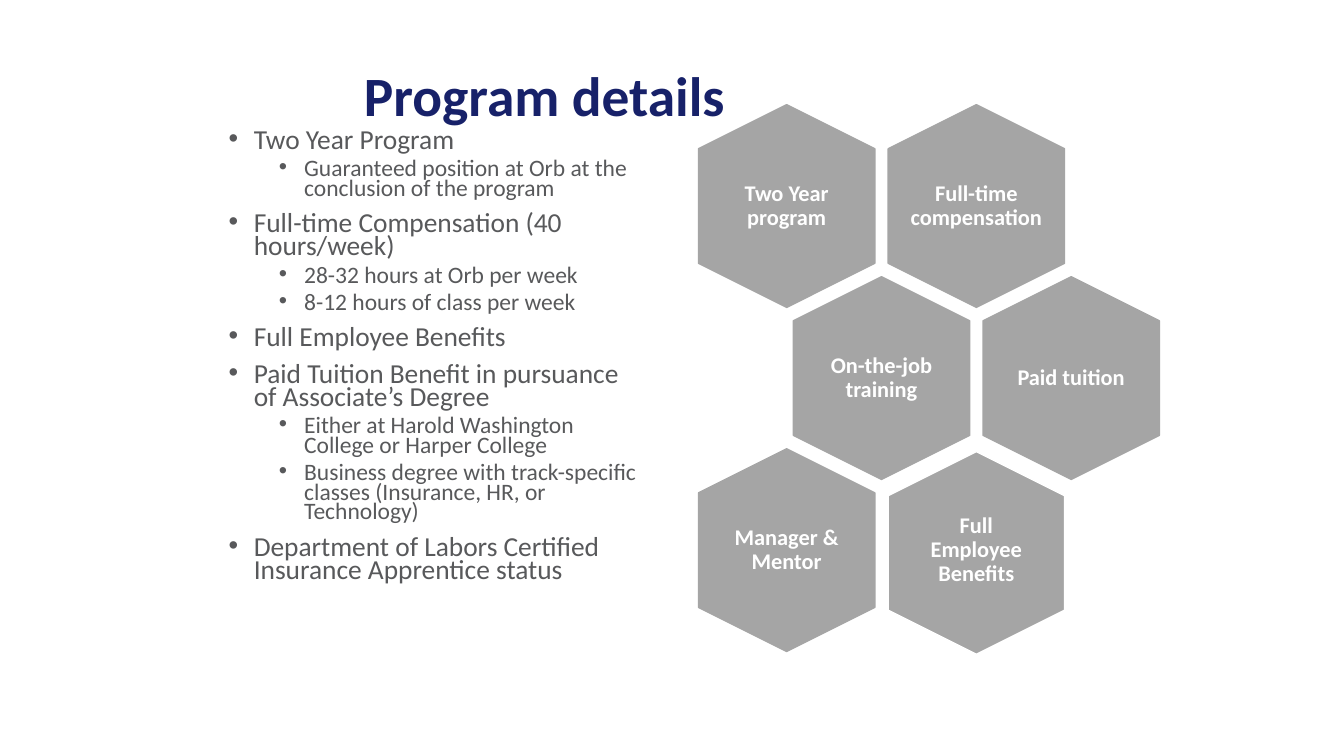
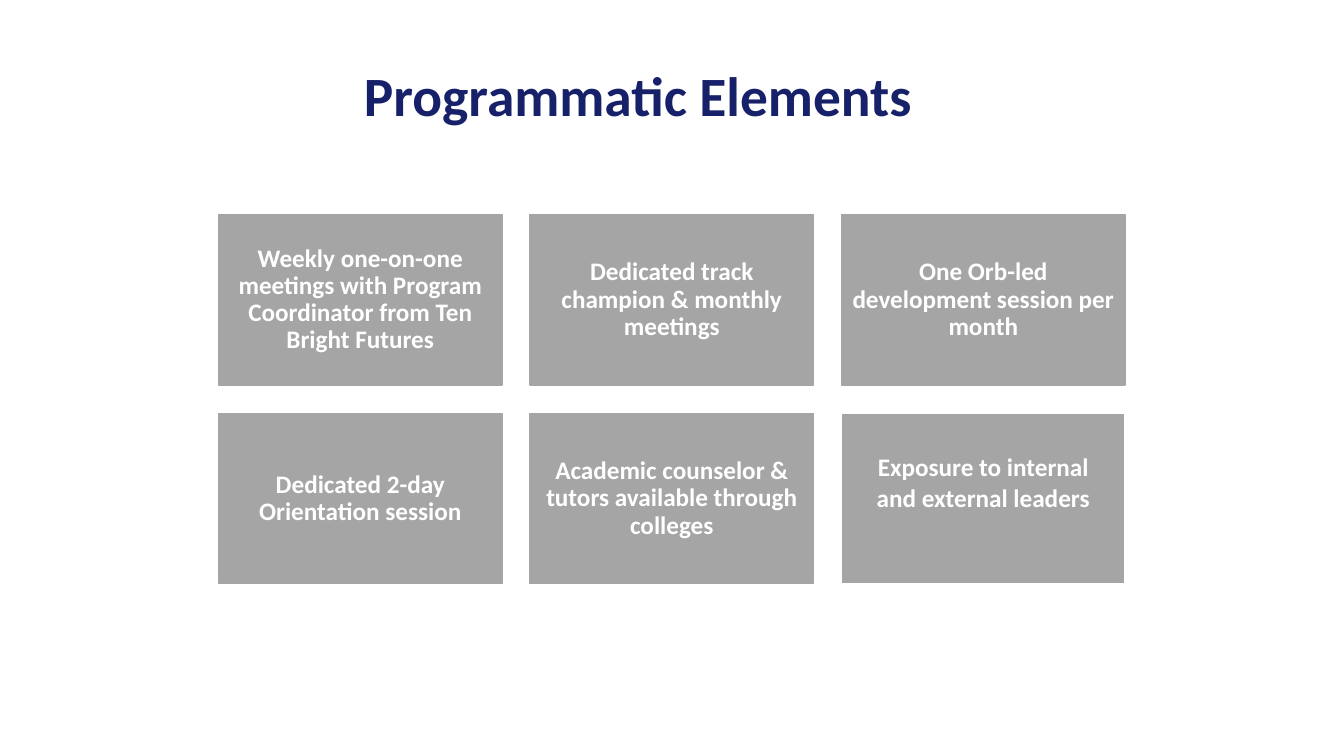
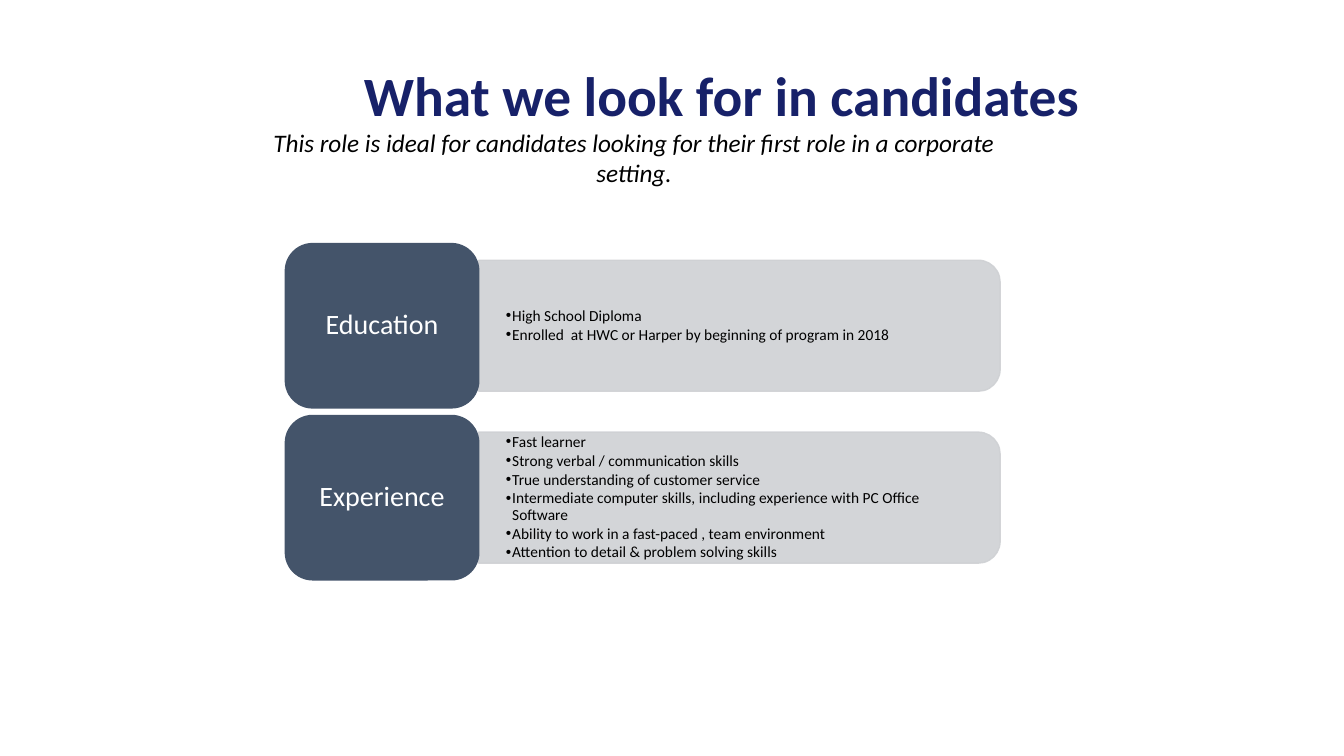
import pptx
import pptx.dml.color
import pptx.enum.shapes
import pptx.enum.text
import pptx.oxml
import pptx.oxml.ns
import pptx.util

Pt = pptx.util.Pt
RGBColor = pptx.dml.color.RGBColor
SHAPE = pptx.enum.shapes.MSO_SHAPE
ALIGN = pptx.enum.text.PP_ALIGN
ANCHOR = pptx.enum.text.MSO_ANCHOR
AUTO_SIZE = pptx.enum.text.MSO_AUTO_SIZE
qn = pptx.oxml.ns.qn

NAVY = RGBColor(0x17, 0x21, 0x69)
TEXT_GRAY = RGBColor(0x58, 0x59, 0x5B)
TILE_GRAY = RGBColor(0xA5, 0xA5, 0xA5)
BAR_GRAY = RGBColor(0xCF, 0xD1, 0xD4)
SLATE = RGBColor(0x44, 0x54, 0x6A)
WHITE = RGBColor(0xFF, 0xFF, 0xFF)
BLACK = RGBColor(0, 0, 0)

FONT = "Calibri"
TITLE_BOX = (252.7, 48.2, 600, 44)

TITLE = dict(size=39.6, color=NAVY, bold=True)
HEXAGON_LABEL = dict(size=16, color=WHITE, bold=True)
TILE_LABEL = dict(size=18, color=WHITE, bold=True)
CARD_LABEL = dict(size=20, color=WHITE)
BAR_ITEM = dict(size=11, color=BLACK)
SUBTITLE = dict(size=18, color=BLACK, italic=True)
DETAIL = dict(size=19.6, color=TEXT_GRAY)
SUB_DETAIL = dict(size=16.8, color=TEXT_GRAY)

DETAILS = [
    (0, "Two Year Program"),
    (1, "Guaranteed position at Orb at the conclusion of the program"),
    (0, "Full-time Compensation (40 hours/week)"),
    (1, "28-32 hours at Orb per week"),
    (1, "8-12 hours of class per week"),
    (0, "Full Employee Benefits"),
    (0, "Paid Tuition Benefit in pursuance of Associate’s Degree"),
    (1, "Either at Harold Washington College or Harper College"),
    (1, "Business degree with track-specific classes (Insurance, HR, or Technology)"),
    (0, "Department of Labors Certified Insurance Apprentice status"),
]

# Column, row, label, label width
HEXAGONS = [
    (0, 0, "Two Year program", 86),
    (1, 0, "Full-time compensation", 112),
    (0.5, 1, "On-the-job training", 86),
    (1.5, 1, "Paid tuition", 86),
    (0, 2, "Manager & Mentor", 86),
]

TILES = [
    "Weekly one-on-one meetings with Program Coordinator from Ten Bright Futures",
    "Dedicated track champion & monthly meetings",
    "One Orb-led development session per month",
    "Dedicated 2-day Orientation session",
    "Academic counselor & tutors available through colleges",
]

CRITERIA = [
    ("Education", [
        "High School Diploma",
        "Enrolled  at HWC or Harper by beginning of program in 2018",
    ]),
    ("Experience", [
        "Fast learner",
        "Strong verbal / communication skills",
        "True understanding of customer service",
        "Intermediate computer skills, including experience with PC Office Software",
        "Ability to work in a fast-paced , team environment",
        "Attention to detail & problem solving skills",
    ]),
]


def place(sp, box):
    for name, value in zip(("left", "top", "width", "height"), box):
        setattr(sp, name, Pt(value))


def setup_frame(sp, anchor=ANCHOR.MIDDLE, insets=(7.2, 3.6, 7.2, 3.6)):
    tf = sp.text_frame
    values = dict(word_wrap=True, auto_size=AUTO_SIZE.NONE, vertical_anchor=anchor)
    for side, inset in zip(("left", "top", "right", "bottom"), insets):
        values["margin_" + side] = Pt(inset)
    for name, value in values.items():
        setattr(tf, name, value)
    return tf


def write(p, text, style, align=ALIGN.CENTER, spacing=0.9):
    p.alignment = align
    p.line_spacing = spacing
    r = p.add_run()
    r.text = text
    r.font.name = FONT
    for name, value in style.items():
        if name == "color":
            r.font.color.rgb = value
        else:
            setattr(r.font, name, Pt(value) if name == "size" else value)


def add_bullet(p, left, hang):
    pPr = p._p.get_or_add_pPr()
    pPr.set("marL", str(Pt(left)))
    pPr.set("indent", str(-Pt(hang)))
    for tag, name, value in (("a:buFont", "typeface", "Arial"),
                             ("a:buChar", "char", "•")):
        bullet = pptx.oxml.parse_xml(
            f'<{tag} {pptx.oxml.ns.nsdecls("a")} {name}="{value}"/>')
        pPr.append(bullet)


def paragraphs(tf, items):
    """Pair each item with its paragraph, using the frame's first one first."""
    for i, item in enumerate(items):
        yield (tf.add_paragraph() if i else tf.paragraphs[0]), item


def add_text(slide, box, text, style, spacing=0.9, **frame):
    sp = slide.shapes.add_textbox(*map(Pt, box))
    write(setup_frame(sp, **frame).paragraphs[0], text, style, spacing=spacing)


def add_block(slide, shape, box, fill, line=None):
    sp = slide.shapes.add_shape(shape, *map(Pt, box))
    sp.shadow.inherit = False
    sp.fill.solid()
    sp.fill.fore_color.rgb = fill
    sp.line.color.rgb = line or fill
    sp.line.width = Pt(1)
    return sp


def set_opacity(sp, percent):
    for color in sp._element.spPr.iter(qn("a:srgbClr")):
        color.append(pptx.oxml.parse_xml(
            f'<a:alpha {pptx.oxml.ns.nsdecls("a")} val="{percent * 1000}"/>'))


def centered(x, y, w, h):
    return x - w / 2, y - h / 2, w, h


def new_slide(prs, title):
    slide = prs.slides.add_slide(prs.slide_layouts[5])
    sp = slide.shapes.title
    place(sp, TITLE_BOX)
    write(setup_frame(sp).paragraphs[0], title, TITLE, ALIGN.LEFT)
    return slide


def add_details(slide, box):
    sp = slide.shapes.add_textbox(*map(Pt, box))
    tf = setup_frame(sp, ANCHOR.TOP)
    for p, (level, text) in paragraphs(tf, DETAILS):
        add_bullet(p, 54 if level else 18, 18)
        if p._p is not tf.paragraphs[0]._p:
            p.space_before = Pt(5 if level else 10)
        write(p, text, SUB_DETAIL if level else DETAIL, ALIGN.LEFT, 0.7)


def add_hexagon(slide, x, y, label, label_width, line=None, drop=0):
    sp = add_block(slide, SHAPE.HEXAGON, centered(x, y + drop, 144.8, 126),
                   TILE_GRAY, line)
    sp.rotation = 90
    sp.adjustments[0] = 0.25
    add_text(slide, centered(x, y, label_width, 99), label, HEXAGON_LABEL,
             insets=(0, 0, 0, 0))


def add_honeycomb(slide, left, top):
    """Place hexagons on a staggered grid; left and top are its outer edges."""
    x0, y0, dx, dy = left + 63, top + 72.4, 135.5, 122.9
    for col, row, label, width in HEXAGONS:
        add_hexagon(slide, x0 + col * dx, y0 + row * dy, label, width)
    add_hexagon(slide, x0 + dx, y0 + 2 * dy, "Full Employee Benefits", 86,
                line=WHITE, drop=2)


def add_tiles(slide, left, top):
    w, h, gap = 202.3, 121.7, 20.2

    def tile(i, text, line=None, spacing=0.9, insets=(5, 5, 5, 5)):
        row, col = divmod(i, 3)
        box = (left + col * (w + gap), top + row * (h + gap), w, h)
        sp = add_block(slide, SHAPE.RECTANGLE, box, TILE_GRAY, line)
        write(setup_frame(sp, insets=insets).paragraphs[0], text, TILE_LABEL,
              spacing=spacing)

    for i, text in enumerate(TILES):
        tile(i, text)
    tile(5, "Exposure to internal and external leaders", line=WHITE, spacing=1.0,
         insets=(18, 0, 18, 24))


def add_criterion(slide, box, label, items):
    """Draw a labelled card with a bar of bullet items to its right."""
    left, top, width, height = box
    card_w, bar_h = 138.2, 93.6
    bar_w, mid = width - card_w, top + height / 2
    bar_x = left + card_w
    bar = add_block(slide, SHAPE.ROUND_2_SAME_RECTANGLE,
                    centered(bar_x + bar_w / 2, mid, bar_h, bar_w), BAR_GRAY)
    bar.rotation = 90
    set_opacity(bar, 90)

    sp = slide.shapes.add_textbox(*map(Pt, (bar_x, mid - 42.2, bar_w - 4.4, 84.4)))
    tf = setup_frame(sp, insets=(19.4, 9.9, 19.4, 9.9))
    for p, text in paragraphs(tf, items):
        add_bullet(p, 4.5, 4.5)
        p.space_after = Pt(1.5)
        write(p, text, BAR_ITEM, ALIGN.LEFT)

    card = add_block(slide, SHAPE.ROUNDED_RECTANGLE, (left, top, card_w, height), SLATE)
    write(setup_frame(card).paragraphs[0], label, CARD_LABEL)


def details_slide(prs):
    slide = new_slide(prs, "Program details")
    add_details(slide, (156.2, 90, 306, 389.5))
    add_honeycomb(slide, 498.9, 74.8)


def elements_slide(prs):
    slide = new_slide(prs, "Programmatic Elements")
    add_tiles(slide, 156.2, 153.4)


def candidates_slide(prs):
    slide = new_slide(prs, "What we look for in candidates")
    for i, (label, items) in enumerate(CRITERIA):
        add_criterion(slide, (203.8, 174 + i * 122.8, 510.6, 117.4), label, items)
    add_text(slide, (185.8, 87.1, 534.2, 51),
             "This role is ideal for candidates looking for their first role "
             "in a corporate setting.", SUBTITLE, spacing=1.0, anchor=ANCHOR.TOP)


def main():
    prs = pptx.Presentation()
    prs.slide_width, prs.slide_height = Pt(960), Pt(540)
    details_slide(prs)
    elements_slide(prs)
    candidates_slide(prs)
    prs.save("out.pptx")


if __name__ == "__main__":
    main()
